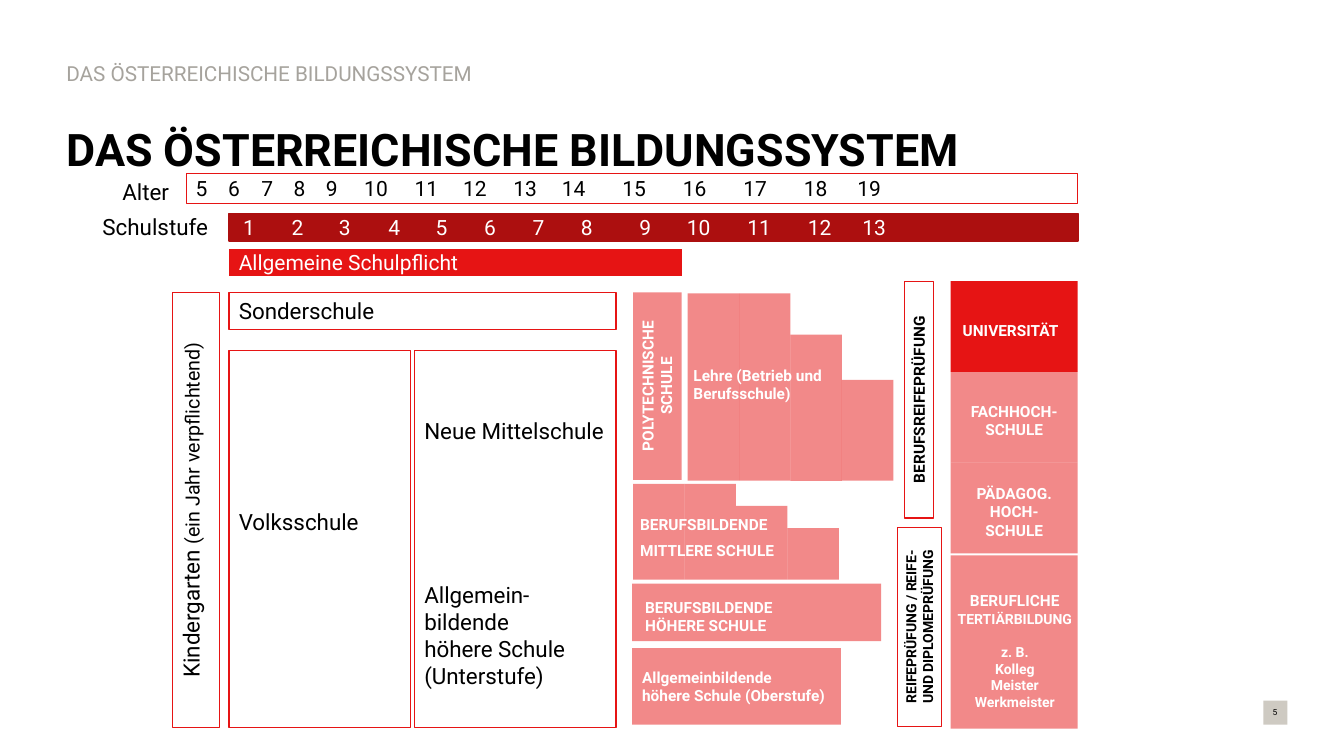
"""Build a slide showing the Austrian education system."""
from dataclasses import dataclass
from typing import Optional

from lxml import etree
from pptx import Presentation, util as u
from pptx.dml.color import RGBColor
from pptx.enum import shapes, text
from pptx.oxml import ns

BLACK = RGBColor(0x00, 0x00, 0x00)
WHITE = RGBColor(0xFF, 0xFF, 0xFF)
RED = RGBColor(0xE6, 0x14, 0x14)
DARK = RGBColor(0xAC, 0x0F, 0x0F)
GREY = RGBColor(0xA6, 0xA3, 0x9D)
SAND = RGBColor(0xCE, 0xCA, 0xC2)
FONT = "Roboto"
RECT = shapes.MSO_SHAPE.RECTANGLE
FLOW = shapes.MSO_SHAPE.FLOWCHART_PROCESS
LEFT, MID = text.PP_ALIGN.LEFT, text.PP_ALIGN.CENTER
TOP, CORE = text.MSO_ANCHOR.TOP, text.MSO_ANCHOR.MIDDLE


@dataclass
class Line:
    text: str
    size: float = 11
    before: float = 0
    tail: str = ""
    small: float = 0


@dataclass
class Box:
    x: float
    y: float
    w: float
    h: float
    lines: tuple[Line, ...] = ()
    fill: Optional[RGBColor] = None
    edge: Optional[RGBColor] = None
    ink: RGBColor = WHITE
    bold: bool = False
    align: text.PP_ALIGN = LEFT
    anchor: text.MSO_ANCHOR = TOP
    pale: bool = False
    turn: float = 0
    upward: bool = False
    pad: float = 0.05
    side: float = 0.1
    kind: shapes.MSO_SHAPE = RECT
    tabs: tuple[float, ...] = ()


def add_tabs(para, stops: tuple[float, ...]) -> None:
    """Add centred tab stops to a paragraph."""
    props = para._p.get_or_add_pPr()
    group = etree.SubElement(props, ns.qn("a:tabLst"))
    for stop in stops:
        etree.SubElement(group, ns.qn("a:tab"), pos=str(u.Inches(stop)), algn="ctr")


def write(shape, box: Box) -> None:
    """Fill a shape with the lines of its box."""
    frame = shape.text_frame
    frame.word_wrap = True
    frame.vertical_anchor = box.anchor
    frame.margin_left = frame.margin_right = u.Inches(box.side)
    frame.margin_top, frame.margin_bottom = u.Inches(box.pad), u.Inches(0.05)
    if box.upward:
        frame._txBody.bodyPr.set("vert", "vert270")
    frame.text = "\n".join(line.text for line in box.lines)
    for para, line in zip(frame.paragraphs, box.lines):
        para.alignment = box.align
        if line.before:
            para.space_before = u.Pt(line.before)
        if box.tabs:
            add_tabs(para, box.tabs)
        if line.tail:
            para.add_run().text = line.tail
        for i, run in enumerate(para.runs):
            font = run.font
            font.name, font.bold = FONT, box.bold
            font.size = u.Pt(line.small if i and line.small else line.size)
            font.color.rgb = box.ink


def draw(slide, box: Box) -> None:
    """Draw one box with its fill, border and text."""
    place = [u.Inches(n) for n in (box.x, box.y, box.w, box.h)]
    if box.fill is None:
        shape = slide.shapes.add_textbox(*place)
    else:
        shape = slide.shapes.add_shape(box.kind, *place)
        shape.shadow.inherit = False
        shape.fill.solid()
        shape.fill.fore_color.rgb = box.fill
        if box.pale:
            tint = shape.fill._xPr.find(".//" + ns.qn("a:srgbClr"))
            etree.SubElement(tint, ns.qn("a:alpha"), val="50000")
        if box.edge is None:
            shape.line.fill.background()
        else:
            shape.line.color.rgb = box.edge
            shape.line.width = u.Pt(1)
    shape.rotation = box.turn
    if box.lines:
        write(shape, box)


def label(x: float, y: float, w: float, h: float, *lines: Line, **style) -> Box:
    """Return a bold white label."""
    return Box(x, y, w, h, lines, bold=True, **style)


def frame(x: float, y: float, w: float, h: float, *lines: Line, **style) -> Box:
    """Return a white box with a red border."""
    return Box(x, y, w, h, lines, WHITE, RED, BLACK, **style)


def block(x: float, y: float, w: float, h: float, *lines: Line, **style) -> Box:
    """Return a pale red block."""
    return Box(x, y, w, h, lines, RED, pale=True, bold=True, **style)


def stairs(x: float, base: float, highs: tuple[float, ...]) -> list[Box]:
    """Return adjoining blocks that stand on one base line."""
    return [block(x + i * 0.51, base - h, 0.51, h) for i, h in enumerate(highs)]


def scale(x: float, y: float, w: float, h: float, first: int, spots: tuple[float, ...],
          fill: RGBColor, edge: RGBColor, ink: RGBColor) -> Box:
    """Return a bar of consecutive numbers centred on the given spots."""
    row = "".join(f"\t{first + i}" for i in range(len(spots)))
    return Box(x, y, w, h, (Line(row, 15),), fill, edge, ink, anchor=CORE, side=0,
               kind=FLOW, tabs=tuple(s - x for s in spots))


AGES = (2, 2.32, 2.65, 2.97, 3.29, 3.73, 4.23, 4.71, 5.21, 5.69, 6.29, 6.89, 7.49, 8.09, 8.62)
GRADES = (2.47, 2.95, 3.42, 3.91, 4.38, 4.86, 5.34, 5.82, 6.4, 6.93, 7.53, 8.13, 8.67)
NAME = "DAS ÖSTERREICHISCHE BILDUNGSSYSTEM"

HEAD = [
    Box(12.53, 6.95, 0.24, 0.24, fill=SAND),
    Box(12.45, 6.87, 0.39, 0.39, (Line("5", 6),), ink=BLACK, align=MID, anchor=CORE),
    Box(0.56, 0.89, 12.2, 1.16, (Line(NAME, 32),), ink=BLACK, bold=True, anchor=CORE),
    Box(0.56, 0.56, 6.1, 0.33, (Line(NAME, 14.8),), ink=GREY, anchor=CORE),
    scale(2.27, 2.12, 8.42, 0.27, 1, GRADES, DARK, DARK, WHITE),
    scale(1.85, 1.72, 8.84, 0.3, 5, AGES, WHITE, RED, BLACK),
    Box(1.04, 1.72, 0.81, 0.37, (Line("Alter", 16),), ink=BLACK, align=MID),
    Box(0.87, 2.07, 1.34, 0.37, (Line("Schulstufe", 16),), ink=BLACK, align=MID),
    Box(2.27, 2.47, 4.49, 0.27, (Line("Allgemeine Schulpflicht", 15),), RED,
        anchor=CORE, kind=FLOW),
]
LOWER = [
    frame(1.71, 2.9, 0.47, 4.32,
          Line("Kindergarten ", 16, tail="(ein Jahr verpflichtend)", small=14),
          align=MID, upward=True),
    frame(2.27, 2.9, 3.84, 0.37, Line("Sonderschule", 16)),
    frame(2.27, 3.48, 1.8, 3.74, Line("Volksschule", 16), pad=1.56),
    frame(4.11, 3.48, 2, 3.74, Line("Neue Mittelschule", 16),
          Line("Allgemein- bildende", 16, 98), Line("höhere Schule (Unterstufe)", 16), pad=0.66),
]
UPPER = [
    block(5.59, 3.59, 1.86, 0.48, Line("POLYTECHNISCHE SCHULE"), align=MID, turn=270),
    *stairs(6.82, 4.77, (1.86, 1.86, 1.45, 1)),
    label(6.78, 3.58, 2.37, 0.47, Line("Lehre (Betrieb und Berufsschule)")),
    *stairs(6.28, 5.75, (0.95, 0.95, 0.73, 0.51)),
    label(6.25, 5.06, 2.37, 0.56, Line("BERUFSBILDENDE"), Line("MITTLERE SCHULE", 11, 5.5)),
    block(6.27, 5.79, 2.47, 0.57),
    label(6.3, 5.88, 2.58, 0.47, Line("BERUFSBILDENDE"), Line("HÖHERE SCHULE")),
    block(6.27, 6.43, 2.07, 0.76, Line("Allgemeinbildende"), Line("höhere Schule (Oberstufe)"),
          anchor=CORE),
    frame(8.13, 6, 1.98, 0.44, Line("REIFEPRÜFUNG / REIFE- UND DIPLOMEPRÜFUNG", 10),
          bold=True, align=MID, turn=270),
    frame(7.94, 3.82, 2.35, 0.29, Line("BERUFSREIFEPRÜFUNG"), bold=True, align=MID, turn=270),
]
THIRD = [
    Box(9.43, 2.79, 1.26, 0.9, fill=RED),
    block(9.43, 3.69, 1.26, 0.9),
    block(9.43, 4.59, 1.26, 0.9),
    block(9.43, 5.51, 1.26, 1.72),
    label(9.45, 3.14, 1.37, 0.29, Line("UNIVERSITÄT")),
    label(9.48, 3.94, 1.16, 0.47, Line("FACHHOCH-SCHULE"), align=MID),
    label(9.53, 4.75, 1.06, 0.66, Line("PÄDAGOG. HOCH-SCHULE"), align=MID),
    label(9.34, 5.82, 1.45, 1.3, Line("BERUFLICHE ", tail="TERTIÄRBILDUNG", small=10),
          Line("z. B.", 10, 11.7), Line("Kolleg", 10), Line("Meister", 10),
          Line("Werkmeister", 10), align=MID),
]


def main() -> None:
    """Draw every box and save the deck."""
    deck = Presentation()
    deck.slide_width, deck.slide_height = u.Inches(13.33), u.Inches(7.5)
    slide = deck.slides.add_slide(deck.slide_layouts[6])
    for box in HEAD + LOWER + UPPER + THIRD:
        draw(slide, box)
    deck.save("out.pptx")


if __name__ == "__main__":
    main()
